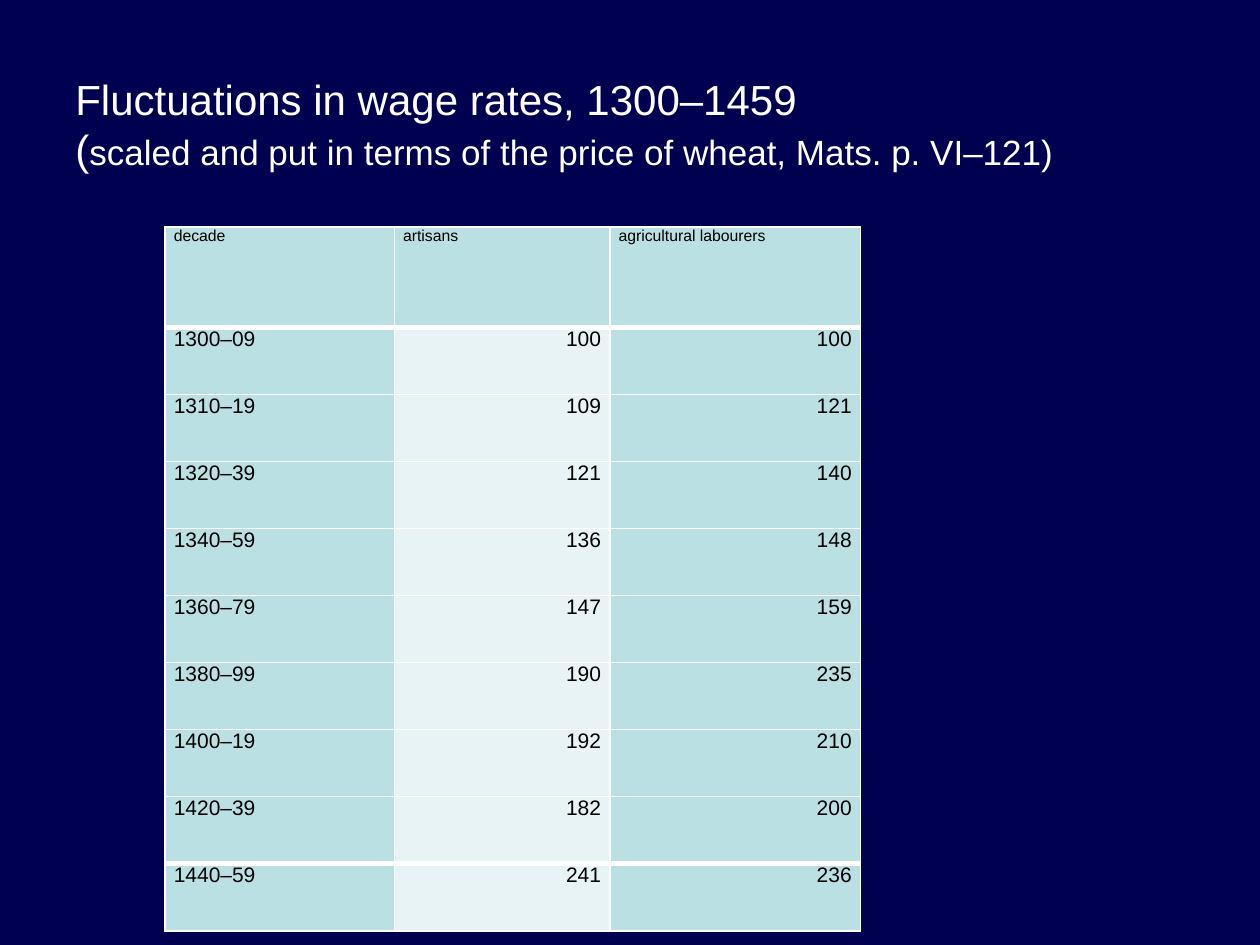
from lxml import etree
from pptx import Presentation
from pptx.dml.color import RGBColor
from pptx.enum.text import MSO_ANCHOR, PP_ALIGN
from pptx.oxml.ns import qn
from pptx.util import Inches, Pt

LEFT, RIGHT = PP_ALIGN.LEFT, PP_ALIGN.RIGHT
MIDDLE, TOP = MSO_ANCHOR.MIDDLE, MSO_ANCHOR.TOP

WIDTH, HEIGHT = 10, 7.5
FONT = "Arial"
NAVY, WHITE, BLACK = "000050", "FFFFFF", "000000"
TEAL, PALE = "BBE0E3", "E7F3F4"

HEADINGS = ("decade", "artisans", "agricultural labourers")
WAGES = (
    ("1300–09", 100, 100),
    ("1310–19", 109, 121),
    ("1320–39", 121, 140),
    ("1340–59", 136, 148),
    ("1360–79", 147, 159),
    ("1380–99", 190, 235),
    ("1400–19", 192, 210),
    ("1420–39", 182, 200),
    ("1440–59", 241, 236),
)
COLUMN_WIDTHS = (1.82, 1.71, 1.99)
COLUMN_FILLS = (TEAL, PALE, TEAL)
HEADER_HEIGHT, TABLE_HEIGHT = 0.8, 5.59
THIN, THICK = 1, 3


def colour(hex_string):
    return RGBColor.from_string(hex_string)


def across(share):
    return Inches(WIDTH * share)


def down(share):
    return Inches(HEIGHT * share)


def add_run(paragraph, text, size, ink):
    run = paragraph.add_run()
    run.text = text
    run.font.name = FONT
    run.font.size = Pt(size)
    run.font.color.rgb = colour(ink)


def add_title(slide):
    box = slide.shapes.add_textbox(across(0.05), down(0.07),
                                   across(0.9), down(0.122))
    frame = box.text_frame
    frame.word_wrap = True
    frame.vertical_anchor = MIDDLE
    title = frame.paragraphs[0]
    add_run(title, "Fluctuations in wage rates, 1300–1459", 24, WHITE)
    title.add_line_break()
    add_run(title, "(", 24, WHITE)
    add_run(title, "scaled and put in terms of the price of wheat, "
                   "Mats. p. VI–121)", 20, WHITE)


def set_borders(cell, top, bottom):
    properties = cell._tc.get_or_add_tcPr()
    for side, width in (("L", THIN), ("R", THIN), ("T", top), ("B", bottom)):
        line = etree.SubElement(properties, qn(f"a:ln{side}"), w=str(Pt(width)))
        fill = etree.SubElement(line, qn("a:solidFill"))
        etree.SubElement(fill, qn("a:srgbClr"), val=WHITE)


def fill_cell(cell, text, size, align, background, top, bottom):
    set_borders(cell, top, bottom)
    cell.fill.solid()
    cell.fill.fore_color.rgb = colour(background)
    cell.margin_left = cell.margin_right = Inches(0.07)
    cell.margin_top = cell.margin_bottom = 0
    cell.vertical_anchor = TOP
    paragraph = cell.text_frame.paragraphs[0]
    paragraph.alignment = align
    paragraph.space_after = Pt(5)
    add_run(paragraph, str(text), size, BLACK)


def add_wage_table(slide):
    rows = (HEADINGS, *WAGES)
    last = len(rows) - 1
    table = slide.shapes.add_table(
        len(rows), len(HEADINGS), across(0.131), down(0.24),
        Inches(sum(COLUMN_WIDTHS)), Inches(TABLE_HEIGHT)).table
    for column, width in zip(table.columns, COLUMN_WIDTHS):
        column.width = Inches(width)

    decade_height = (TABLE_HEIGHT - HEADER_HEIGHT) / len(WAGES)
    for r, values in enumerate(rows):
        is_header = r == 0
        table.rows[r].height = Inches(HEADER_HEIGHT if is_header else decade_height)
        # Heavy rules set off the header and the final decade
        top = THICK if r in (1, last) else THIN
        bottom = THICK if r in (0, last - 1) else THIN
        for c, value in enumerate(values):
            fill_cell(table.cell(r, c), value,
                      size=9 if is_header else 12,
                      align=LEFT if is_header or c == 0 else RIGHT,
                      background=TEAL if is_header else COLUMN_FILLS[c],
                      top=top, bottom=bottom)


def main():
    deck = Presentation()
    deck.slide_width, deck.slide_height = Inches(WIDTH), Inches(HEIGHT)
    slide = deck.slides.add_slide(deck.slide_layouts[6])

    # Navy background
    slide.background.fill.solid()
    slide.background.fill.fore_color.rgb = colour(NAVY)

    # Heading and wage figures
    add_title(slide)
    add_wage_table(slide)
    deck.save("out.pptx")


if __name__ == "__main__":
    main()
